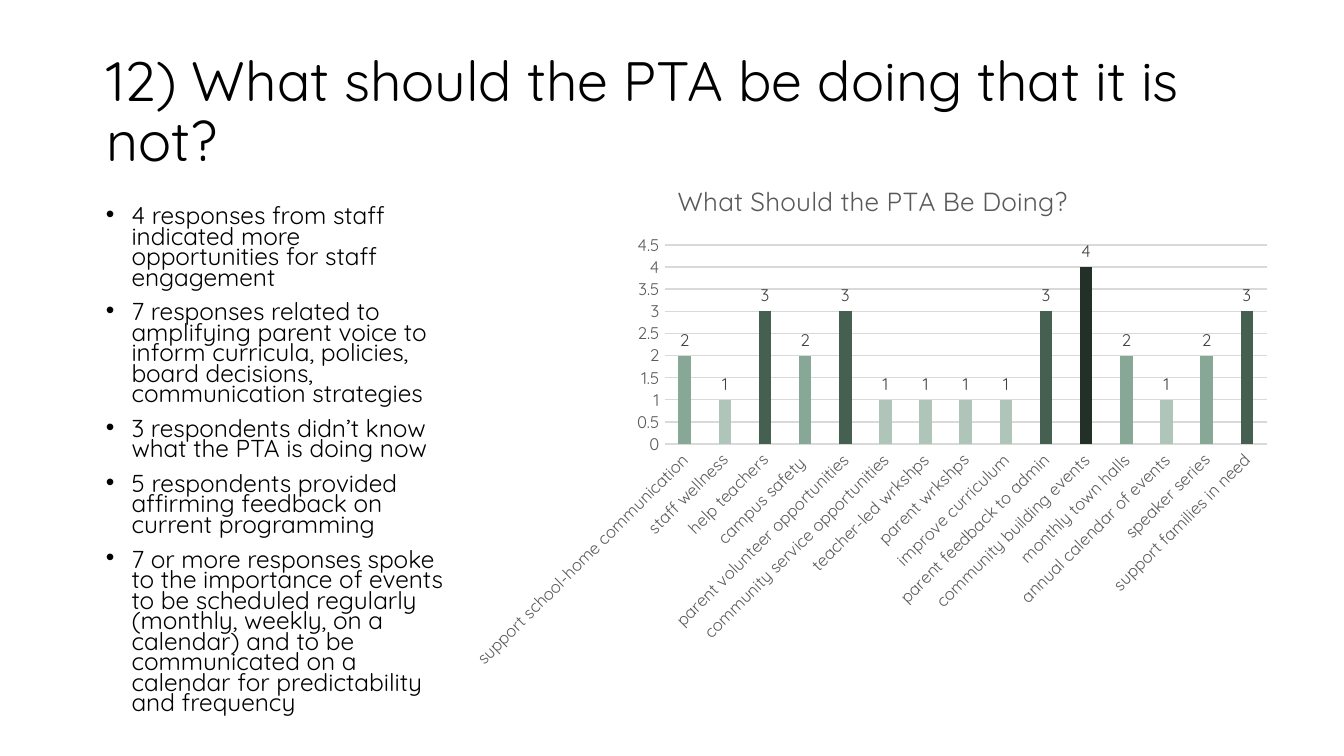
import pptx
import pptx.chart.data
import pptx.dml.color
import pptx.enum.chart
import pptx.enum.text
import pptx.oxml
import pptx.oxml.ns
import pptx.util

RGBColor = pptx.dml.color.RGBColor
Inches = pptx.util.Inches
Pt = pptx.util.Pt

BLACK = RGBColor(0x00, 0x00, 0x00)
GRAY = RGBColor(0x59, 0x59, 0x59)
LABEL_GRAY = RGBColor(0x40, 0x40, 0x40)
GRID_GRAY = RGBColor(0xD9, 0xD9, 0xD9)
SERIES_GREEN = RGBColor(0x54, 0x9E, 0x39)
COUNT_COLORS = {
    1: RGBColor(0xAF, 0xC5, 0xB9),
    2: RGBColor(0x87, 0xA8, 0x96),
    3: RGBColor(0x45, 0x5F, 0x51),
    4: RGBColor(0x22, 0x30, 0x28),
}
FONT = "Quicksand"

TITLE = "12) What should the PTA be doing that it is not?"
FINDINGS = [
    "4 responses from staff indicated more opportunities for staff engagement",
    "7 responses related to amplifying parent voice to inform curricula, policies, "
    "board decisions, communication strategies",
    "3 respondents didn’t know what the PTA is doing now",
    "5 respondents provided affirming feedback on current programming",
    "7 or more responses spoke to the importance of events to be scheduled regularly "
    "(monthly, weekly, on a calendar) and to be communicated on a calendar for "
    "predictability and frequency",
]
CHART_TITLE = "What Should the PTA Be Doing?"
REQUESTS = [
    ("support school-home communication", 2),
    ("staff wellness", 1),
    ("help teachers", 3),
    ("campus safety ", 2),
    ("parent volunteer opportunities", 3),
    ("community service opportunities", 1),
    ("teacher-led wrkshps", 1),
    ("parent wrkshps", 1),
    ("improve curriculum", 1),
    ("parent feedback to admin", 3),
    ("community building events", 4),
    ("monthly town halls", 2),
    ("annual calendar of events", 1),
    ("speaker series", 2),
    ("support families in need", 3),
]

WIDTH = 10
HEIGHT = WIDTH * 9 / 16
MARGIN = 0.69
COLUMN = 2.72
CHART_TOP = 1.16
BODY_TOP = 1.5
BLOCK_HEIGHT = 3.9


def style(font, size, color):
    font.name = FONT
    font.size = Pt(size)
    font.bold = False
    font.color.rgb = color


def add_span(para, text, size, color):
    span = para.add_run()
    span.text = text
    style(span.font, size, color)


def add_bullet(para, indent):
    props = para._p.get_or_add_pPr()
    props.set("marL", str(Inches(indent)))
    props.set("indent", str(-Inches(indent)))
    namespace = pptx.oxml.ns.nsdecls("a")
    for tag in ('buFont typeface="Arial"', 'buChar char="•"'):
        props.append(pptx.oxml.parse_xml(f"<a:{tag} {namespace}/>"))


def manual_layout(shares, inner=False):
    target = '<c:layoutTarget val="inner"/>' if inner else ""
    modes = "".join(f'<c:{key}Mode val="edge"/>' for key in "xy")
    values = "".join(f'<c:{key} val="{share}"/>' for key, share in shares.items())
    return pptx.oxml.parse_xml(
        f'<c:layout {pptx.oxml.ns.nsdecls("c")}><c:manualLayout>'
        f"{target}{modes}{values}</c:manualLayout></c:layout>"
    )


def set_layout(parent, layout, after=None):
    for old in parent.findall(pptx.oxml.ns.qn("c:layout")):
        parent.remove(old)
    if after is None:
        parent.insert(0, layout)
    else:
        parent.find(pptx.oxml.ns.qn(after)).addnext(layout)


def add_title(page):
    box = page.shapes.title
    box.left, box.top = Inches(MARGIN), Inches(0.3)
    box.width, box.height = Inches(WIDTH - 2 * MARGIN), Inches(1.09)
    frame = box.text_frame
    frame.margin_left = frame.margin_right = Inches(0.1)
    frame.margin_top = frame.margin_bottom = Inches(0.1)
    frame.vertical_anchor = pptx.enum.text.MSO_ANCHOR.MIDDLE
    frame.auto_size = pptx.enum.text.MSO_AUTO_SIZE.NONE
    frame.word_wrap = True
    para = frame.paragraphs[0]
    para.alignment = pptx.enum.text.PP_ALIGN.LEFT
    para.line_spacing = 0.9
    add_span(para, TITLE, 29.7, BLACK)


def add_findings(page):
    box = page.shapes.add_textbox(
        Inches(MARGIN), Inches(BODY_TOP), Inches(COLUMN), Inches(BLOCK_HEIGHT)
    )
    frame = box.text_frame
    frame.word_wrap = True
    for index, finding in enumerate(FINDINGS):
        para = frame.add_paragraph() if index else frame.paragraphs[0]
        para.line_spacing = 0.7
        para.space_before = Pt(7.5)
        add_bullet(para, 0.19)
        add_span(para, finding, 13.1, BLACK)


def style_axis(axis, line_color):
    axis.major_tick_mark = axis.minor_tick_mark = pptx.enum.chart.XL_TICK_MARK.NONE
    style(axis.tick_labels.font, 9, GRAY)
    if line_color is None:
        axis.format.line.fill.background()
    else:
        axis.format.line.color.rgb = line_color
        axis.format.line.width = Pt(0.75)


def add_requests_chart(page):
    data = pptx.chart.data.CategoryChartData()
    data.categories = [request for request, count in REQUESTS]
    data.add_series("Series 1", [count for request, count in REQUESTS])
    chart = page.shapes.add_chart(
        pptx.enum.chart.XL_CHART_TYPE.COLUMN_CLUSTERED,
        Inches(MARGIN + COLUMN), Inches(CHART_TOP), Inches(6.14), Inches(BLOCK_HEIGHT),
        data,
    ).chart
    style(chart.font, 10, BLACK)
    chart.has_legend = False
    chart.has_title = True
    add_span(chart.chart_title.text_frame.paragraphs[0], CHART_TITLE, 14, GRAY)
    set_layout(chart.chart_title._element, manual_layout({"x": 0.26, "y": 0.04}), "c:tx")
    plot_shares = {"x": 0.25, "y": 0.17, "w": 0.73, "h": 0.38}
    plot_area = chart._chartSpace.chart.plotArea
    set_layout(plot_area, manual_layout(plot_shares, inner=True))

    style_axis(chart.category_axis, GRID_GRAY)
    category_text = chart.category_axis._element.find(pptx.oxml.ns.qn("c:txPr"))
    category_text.find(pptx.oxml.ns.qn("a:bodyPr")).set("rot", str(-45 * 60000))
    values = chart.value_axis
    style_axis(values, None)
    values.minimum_scale, values.maximum_scale, values.major_unit = 0, 4.5, 0.5
    values.major_gridlines.format.line.color.rgb = GRID_GRAY
    values.major_gridlines.format.line.width = Pt(0.75)

    plot = chart.plots[0]
    plot.vary_by_categories = False
    plot.gap_width, plot.overlap = 219, -27
    series = plot.series[0]
    labels = series.data_labels
    labels.show_value = True
    labels.position = pptx.enum.chart.XL_LABEL_POSITION.OUTSIDE_END
    style(labels.font, 9, LABEL_GRAY)
    series.format.fill.solid()
    series.format.fill.fore_color.rgb = SERIES_GREEN
    for index, (request, count) in enumerate(REQUESTS):
        fill = series.points[index].format.fill
        fill.solid()
        fill.fore_color.rgb = COUNT_COLORS[count]


def main():
    deck = pptx.Presentation()
    deck.slide_width, deck.slide_height = Inches(WIDTH), Inches(HEIGHT)
    page = deck.slides.add_slide(deck.slide_layouts[5])
    add_title(page)
    add_findings(page)
    add_requests_chart(page)
    deck.save("out.pptx")


if __name__ == "__main__":
    main()
